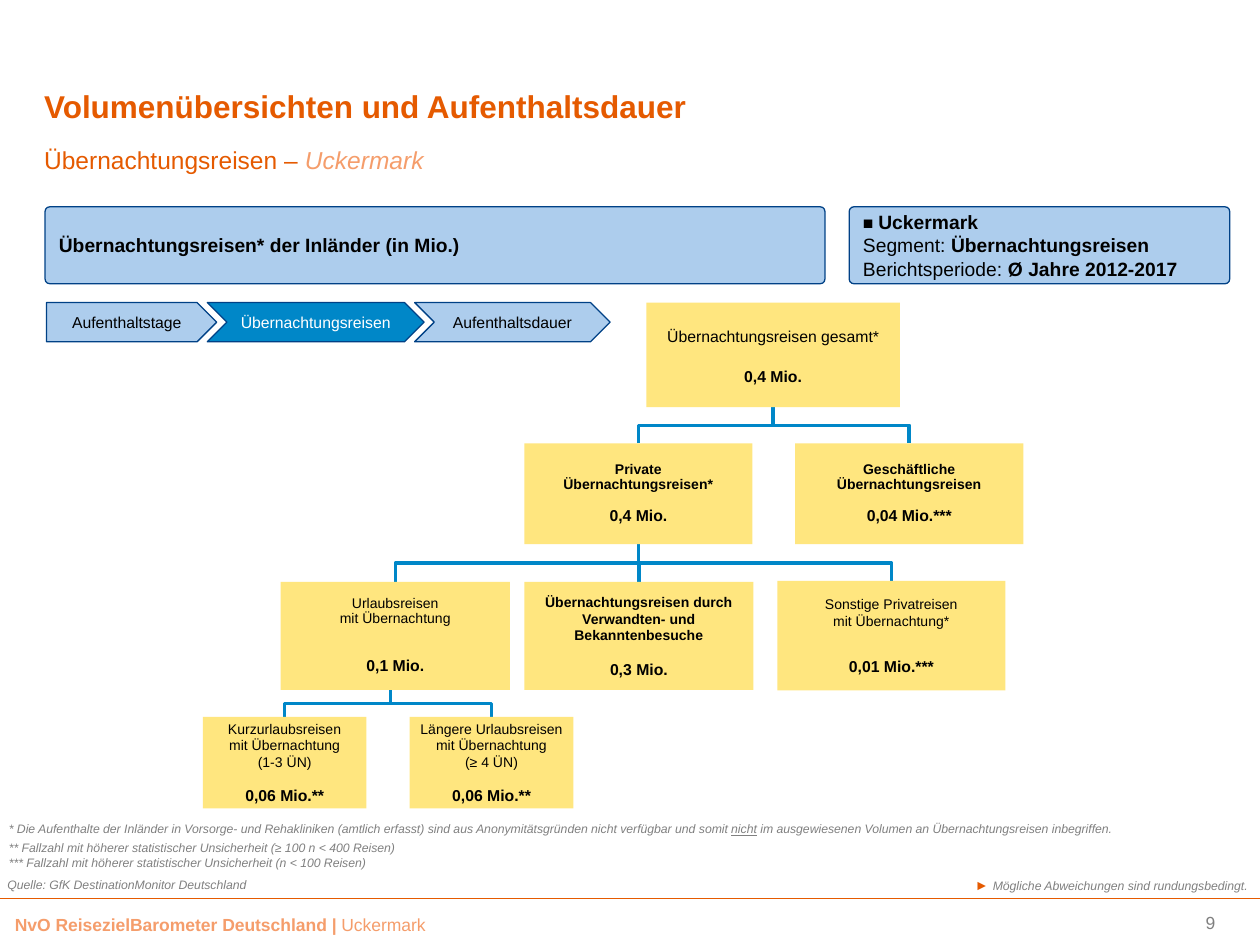
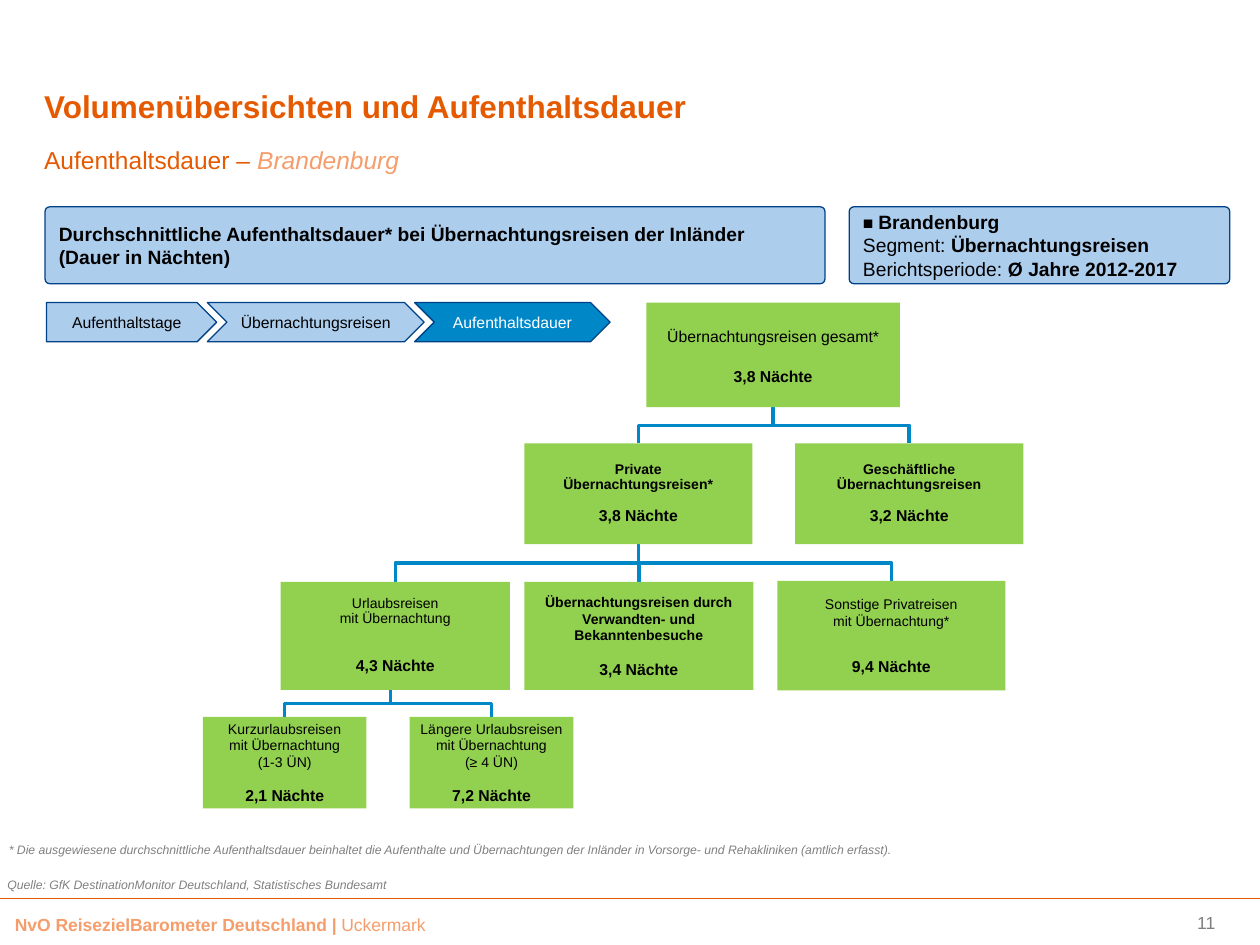
from collections import namedtuple
from pptx import Presentation
from pptx.dml.color import RGBColor
from pptx.enum.shapes import MSO_CONNECTOR as Link, MSO_SHAPE as Form
from pptx.enum.text import MSO_ANCHOR as Anchor, PP_ALIGN as Align
from pptx.oxml.ns import qn
from pptx.util import Cm, Pt

FONT = "Arial"
BLACK, WHITE, GREY = "000000", "FFFFFF", "808080"
ORANGE, PEACH = "E55A00", "F59D6B"
PALE, BLUE, NAVY = "ADCDED", "0087C8", "004186"
YELLOW, GREEN = "FFE67F", "92D050"
BOLD = {"bold": True}
PLAIN = {"bold": False}
NOTE = {"size": 7, "color": GREY, "italic": True}

# gap: points between label and value; lead: line spacing
Node = namedtuple("Node", "box label bold gap lead size", defaults=(1, 8))
TREE = {
    "total": Node((13.03, 6.1, 5.11, 2.11), "Übernachtungsreisen gesamt*",
                  False, 11, 1.14, 9),
    "private": Node((10.57, 8.94, 4.6, 2.03), "Private\nÜbernachtungsreisen*",
                    True, 9, 0.9),
    "business": Node((16.03, 8.94, 4.6, 2.03),
                     "Geschäftliche Übernachtungsreisen", True, 9, 0.9),
    "holiday": Node((5.66, 11.73, 4.62, 2.18),
                    "Urlaubsreisen\nmit Übernachtung", False, 18, 0.9),
    "family": Node((10.57, 11.73, 4.62, 2.18),
                   "Übernachtungsreisen durch Verwandten- und "
                   "Bekanntenbesuche", True, 9),
    "other": Node((15.67, 11.71, 4.6, 2.21),
                  "Sonstige Privatreisen\nmit Übernachtung*", False, 16),
    "short": Node((4.09, 14.45, 3.3, 1.85),
                  "Kurzurlaubsreisen\nmit Übernachtung\n(1-3 ÜN)", False, 9),
    "long": Node((8.26, 14.45, 3.3, 1.85),
                 "Längere Urlaubsreisen mit Übernachtung\n(≥ 4 ÜN)", False, 9),
}
# parent, children, shift of the trunk from the parent's middle
FORKS = [
    ("total", ("private", "business"), 0),
    ("private", ("holiday", "family", "other"), 0),
    ("holiday", ("short", "long"), -0.1),
]
STEPS = [("Aufenthaltstage", 3.43), ("Übernachtungsreisen", 4.37),
         ("Aufenthaltsdauer", 3.94)]


def rgb(code):
    return RGBColor.from_string(code)


def style(font, size, color, bold=False, italic=False, under=False):
    font.name, font.size = FONT, Pt(size)
    font.bold, font.italic, font.underline = bold, italic, under
    font.color.rgb = rgb(color)


def write(frame, *paras, align=Align.LEFT, anchor=Anchor.TOP,
          inset=(0, 0, 0, 0), gap=0, lead=1, **fmt):
    """Fill a frame; a paragraph is a string or a list of (text, changes)."""
    frame.word_wrap = True
    frame.vertical_anchor = anchor
    (frame.margin_left, frame.margin_top,
     frame.margin_right, frame.margin_bottom) = map(Cm, inset)
    for i, runs in enumerate(paras):
        para = frame.paragraphs[0] if i == 0 else frame.add_paragraph()
        para.alignment, para.line_spacing = align, lead
        para.space_before = Pt(gap if i else 0)
        for text, change in [(runs, {})] if isinstance(runs, str) else runs:
            for j, line in enumerate(text.split("\n")):
                if j:
                    para.add_line_break()
                if line:
                    run = para.add_run()
                    run.text = line
                    style(run.font, **{**fmt, **change})


class Deck:
    def __init__(self):
        self.prs = Presentation()
        self.prs.slide_width, self.prs.slide_height = Cm(25.4), Cm(19.05)
        self.slide = None

    def text(self, box, *paras, **fmt):
        area = self.slide.shapes.add_textbox(*map(Cm, box))
        write(area.text_frame, *paras, **fmt)

    def shape(self, form, box, fill, *paras, edge=None, adj=None, **fmt):
        item = self.slide.shapes.add_shape(form, *map(Cm, box))
        item.shadow.inherit = False
        item.fill.solid()
        item.fill.fore_color.rgb = rgb(fill)
        if edge:
            item.line.color.rgb, item.line.width = rgb(edge), Pt(0.75)
        else:
            item.line.fill.background()
        if adj is not None:
            item.adjustments[0] = adj
        write(item.text_frame, *paras, anchor=Anchor.MIDDLE, **fmt)

    def line(self, x1, y1, x2, y2, color, width):
        item = self.slide.shapes.add_connector(
            Link.STRAIGHT, *map(Cm, (x1, y1, x2, y2)))
        item.line.color.rgb, item.line.width = rgb(color), Pt(width)
        props = item._element.spPr
        props.append(props.makeelement(qn("a:effectLst"), {}))

    def bracket(self, points):
        first, *rest = [(Cm(x), Cm(y)) for x, y in points]
        path = self.slide.shapes.build_freeform(*first)
        path.add_line_segments(rest, close=False)
        item = path.convert_to_shape()
        item.shadow.inherit = False
        item.fill.background()
        item.line.color.rgb, item.line.width = rgb(BLUE), Pt(2)

    def fork(self, root, kids, shift):
        """Join a parent box to the row of boxes below it."""
        left, top, width, height = TREE[root].box
        stem, base = left + width / 2 + shift, top + height
        ends = [(x + w / 2, y) for x, y, w, h in
                (TREE[kid].box for kid in kids)]
        mid = (base + ends[0][1]) / 2
        self.line(stem, base, stem, mid, BLUE, 2)
        self.bracket([ends[0], (ends[0][0], mid), (ends[-1][0], mid),
                      ends[-1]])
        for x, y in ends[1:-1]:
            self.line(x, mid, x, y, BLUE, 2)

    def tree(self, fill, values):
        for fork in FORKS:
            self.fork(*fork)
        for node, value in zip(TREE.values(), values):
            self.shape(Form.RECTANGLE, node.box, fill,
                       [(node.label, {"bold": node.bold})],
                       [(value, {"size": 9, "bold": True})],
                       align=Align.CENTER, inset=(0.08,) * 4, gap=node.gap,
                       lead=node.lead, size=node.size, color=BLACK)

    def steps(self, active):
        x = 0.94
        for i, (name, width) in enumerate(STEPS):
            on = name == active
            self.shape(Form.CHEVRON if i else Form.PENTAGON,
                       (x, 6.1, width, 0.79), BLUE if on else PALE, name,
                       edge=NAVY, align=Align.CENTER, size=9,
                       color=WHITE if on else BLACK)
            x += width - 0.19

    def note(self, top, *paras, left=0.18, width=23):
        self.text((0, top, width, 0.57), *paras,
                  inset=(left, 0.13, 0, 0), **NOTE)

    def frame(self, number):
        self.line(0, 18.11, 25.4, 18.11, ORANGE, 0.55)
        self.text((0.05, 18.29, 17.1, 0.69),
                  [("NvO ReisezielBarometer Deutschland | ", BOLD),
                   ("Uckermark", {})],
                  inset=(0.25, 0.13, 0.25, 0.13), size=10, color=PEACH)
        self.text((20.9, 18.39, 3.6, 0.4), str(number), align=Align.RIGHT,
                  anchor=Anchor.MIDDLE, size=10, color="7F7F7F")

    def page(self, number, topic, region, head, source):
        """Start a slide with everything the slides share."""
        self.slide = self.prs.slides.add_slide(self.prs.slide_layouts[5])
        title = self.slide.shapes.title
        title.left, title.top, title.width, title.height = map(
            Cm, (0.89, 0.71, 17.6, 1.8))
        write(title.text_frame, "Volumenübersichten und Aufenthaltsdauer",
              anchor=Anchor.BOTTOM, size=18, color=ORANGE, bold=True)
        self.frame(number)
        self.text((0.89, 2.92, 23.6, 0.79),
                  [(topic + " – ", {}),
                   (region, {"color": PEACH, "italic": True})],
                  size=14, color=ORANGE)
        band = {"edge": NAVY, "adj": 0.06, "size": 11, "color": BLACK,
                "bold": True, "inset": (0.25, 0.13, 0.25, 0.13)}
        self.shape(Form.ROUNDED_RECTANGLE, (0.91, 4.17, 15.72, 1.55), PALE,
                   head, **band)
        self.shape(Form.ROUNDED_RECTANGLE, (17.12, 4.17, 7.67, 1.55), PALE,
                   [("■ ", {"size": 10}), (region, {})],
                   [("Segment: ", PLAIN), ("Übernachtungsreisen", {})],
                   [("Berichtsperiode: ", PLAIN), ("Ø Jahre 2012-2017", {})],
                   **band)
        self.steps(topic)
        self.note(17.55, source, left=0.15, width=12.2)


def main():
    deck = Deck()

    deck.page(9, "Übernachtungsreisen", "Uckermark",
              "Übernachtungsreisen* der Inländer (in Mio.)",
              "Quelle: GfK DestinationMonitor Deutschland")
    deck.tree(YELLOW, ["0,4 Mio.", "0,4 Mio.", "0,04 Mio.***", "0,1 Mio.",
                       "0,3 Mio.", "0,01 Mio.***", "0,06 Mio.**",
                       "0,06 Mio.**"])
    deck.note(16.43, [
        ("* Die Aufenthalte der Inländer in Vorsorge- und Rehakliniken "
         "(amtlich erfasst) sind aus Anonymitätsgründen nicht verfügbar und "
         "somit ", {}),
        ("nicht", {"under": True}),
        (" im ausgewiesenen Volumen an Übernachtungsreisen inbegriffen.", {}),
    ])
    deck.note(16.81,
              "** Fallzahl mit höherer statistischer Unsicherheit "
              "(≥ 100 n < 400 Reisen)",
              "*** Fallzahl mit höherer statistischer Unsicherheit "
              "(n < 100 Reisen)")
    deck.text((16.71, 17.55, 8.69, 0.53),
              [("► ", {"size": 8, "color": ORANGE, "italic": False}),
               ("Mögliche Abweichungen sind rundungsbedingt.", {})],
              align=Align.RIGHT, inset=(0.25, 0.13, 0.25, 0.13), **NOTE)

    deck.page(11, "Aufenthaltsdauer", "Brandenburg",
              "Durchschnittliche Aufenthaltsdauer* bei Übernachtungsreisen "
              "der Inländer\n(Dauer in Nächten)",
              "Quelle: GfK DestinationMonitor Deutschland, "
              "Statistisches Bundesamt")
    nights = ["3,8", "3,8", "3,2", "4,3", "3,4", "9,4", "2,1", "7,2"]
    deck.tree(GREEN, [count + " Nächte" for count in nights])
    deck.note(16.84,
              "* Die ausgewiesene durchschnittliche Aufenthaltsdauer "
              "beinhaltet die Aufenthalte und Übernachtungen der Inländer in "
              "Vorsorge- und Rehakliniken (amtlich erfasst).")

    deck.prs.save("out.pptx")


if __name__ == "__main__":
    main()
